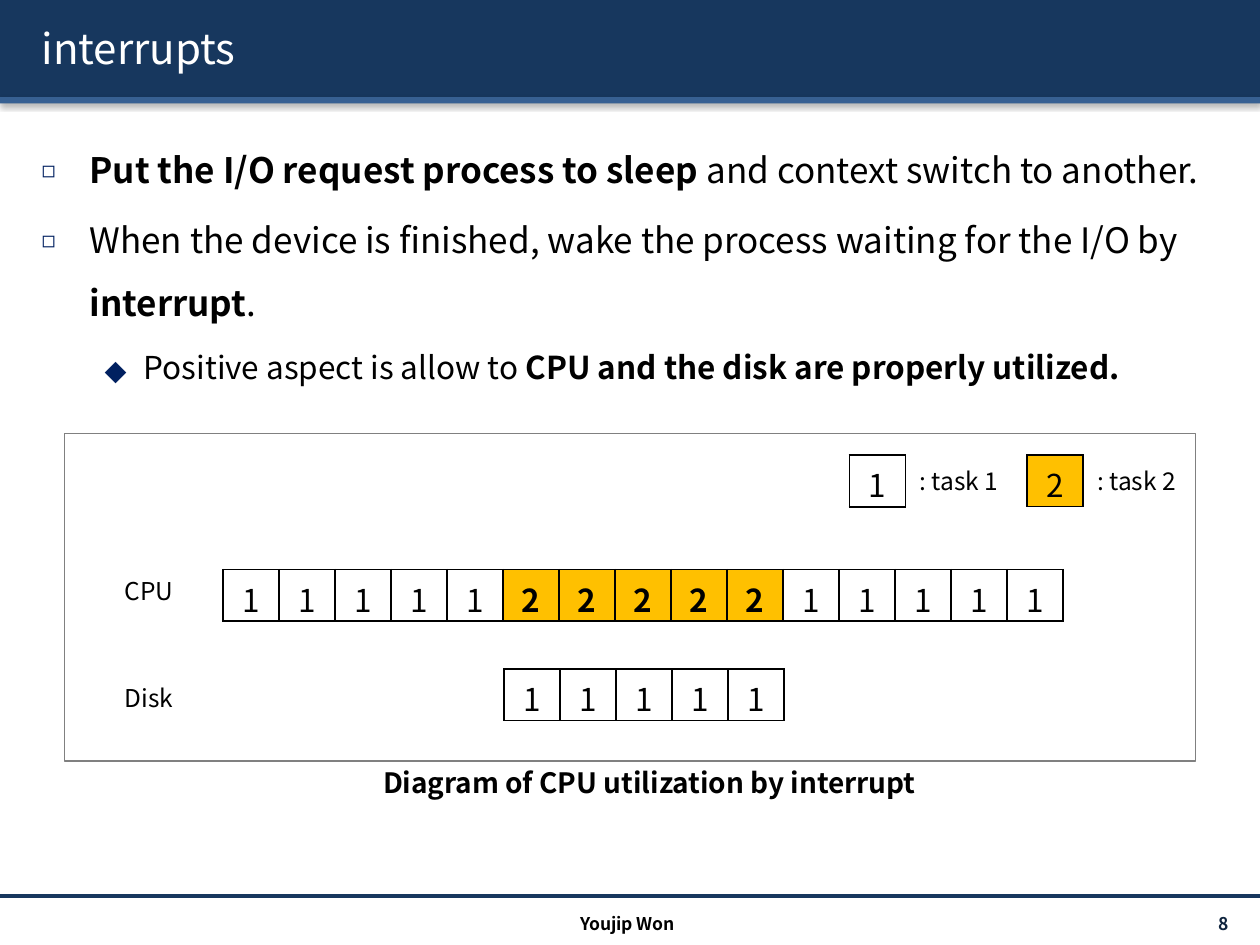
from lxml.etree import SubElement
from pptx import Presentation
from pptx.dml.color import RGBColor
from pptx.enum.shapes import MSO_CONNECTOR as Connector, MSO_SHAPE as Preset
from pptx.enum.text import MSO_ANCHOR as Anchor, PP_ALIGN as Align
from pptx.oxml.ns import qn
from pptx.util import Inches, Pt

FONT = "Noto Sans CJK KR"
NAVY = RGBColor(0x17, 0x37, 0x5E)
STEEL = RGBColor(0x37, 0x60, 0x92)
INK = RGBColor(0x0F, 0x24, 0x3E)
BULLET = RGBColor(0x00, 0x20, 0x60)
AMBER = RGBColor(0xFF, 0xC0, 0x00)
GRAY = RGBColor(0x80, 0x80, 0x80)
BLACK = RGBColor(0, 0, 0)
WHITE = RGBColor(255, 255, 255)
CELL_WIDTH = 0.4445


def style(font, size, color=BLACK, bold=False):
    """Apply the slide's typeface to a font."""
    font.name, font.size, font.bold = FONT, Pt(size), bold
    font.color.rgb = color


def add_shadow(effects, blur, distance, angle, opacity):
    """Add a black outer shadow to an effect list."""
    shadow = SubElement(effects, qn("a:outerShdw"), blurRad=str(Pt(blur)),
                        dist=str(Pt(distance)), dir=str(angle * 60000),
                        algn="t", rotWithShape="0")
    black = SubElement(shadow, qn("a:srgbClr"), val=str(BLACK))
    SubElement(black, qn("a:alpha"), val=str(opacity * 1000))


def place(part, box):
    """Move a part to a box given in inches."""
    part.left, part.top, part.width, part.height = map(Inches, box)


def add_label(slide, box, text, size, align=Align.LEFT, color=BLACK,
              bold=False, anchor=Anchor.TOP):
    """Add a one-line text box."""
    frame = slide.shapes.add_textbox(*map(Inches, box)).text_frame
    frame.word_wrap, frame.vertical_anchor = True, anchor
    line = frame.paragraphs[0]
    line.text, line.alignment = text, align
    style(line.font, size, color, bold)


def add_header(slide, box, text):
    """Draw the two shadowed bands and set the title over them."""
    left, top, width, height = box
    band_height = height - 0.05
    for offset, thickness, color in ((0, band_height, NAVY), (band_height, 0.05, STEEL)):
        band = slide.shapes.add_shape(
            Preset.RECTANGLE, *map(Inches, (left, top + offset, width, thickness)))
        band.fill.solid()
        band.fill.fore_color.rgb = color
        band.line.fill.background()
        band.shadow.inherit = False
        add_shadow(band.element.spPr.find(qn("a:effectLst")), 3.1, 1.6, 90, 38)
    title = slide.shapes.title
    place(title, (left + 0.23, top + 0.06, width - 0.39, 0.64))
    title.element.getparent().append(title.element)
    frame = title.text_frame
    frame.vertical_anchor = Anchor.MIDDLE
    heading = frame.paragraphs[0]
    heading.alignment = Align.LEFT
    run = heading.add_run()
    run.text = text
    style(run.font, 24, WHITE)
    properties = run.font.fill._xPr
    effects = SubElement(properties, qn("a:effectLst"))
    properties.find(qn("a:solidFill")).addnext(effects)
    add_shadow(effects, 1, 2, 45, 100)


def add_points(slide, box, points):
    """Fill the body placeholder with bulleted points of (level, runs)."""
    body = slide.placeholders[1]
    place(body, box)
    frame = body.text_frame
    for index, (level, pieces) in enumerate(points):
        point = frame.add_paragraph() if index else frame.paragraphs[0]
        size, indent, hanging, mark, scale = (
            (18, 0.81, 0.31, "⬥", 100) if level else (20, 0.38, 0.38, "◻", 65))
        point.level, point.line_spacing = level, 1.5
        point.space_before = Pt(size * 0.2 if index else 0)
        properties = point._p.get_or_add_pPr()
        properties.set("marL", str(Inches(indent)))
        properties.set("indent", str(-Inches(hanging)))
        SubElement(SubElement(properties, qn("a:buClr")), qn("a:srgbClr"), val=str(BULLET))
        SubElement(properties, qn("a:buSzPct"), val=str(scale * 1000))
        SubElement(properties, qn("a:buFont"), typeface=FONT)
        SubElement(properties, qn("a:buChar"), char=mark)
        style(point.font, size)
        for text, bold in pieces:
            run = point.add_run()
            run.text, run.font.bold = text, bold


def add_slots(slide, left, top, tasks, bold_second=False, bottom=0.0):
    """Add a one-row table of task numbers, with task 2 highlighted."""
    table = slide.shapes.add_table(
        1, len(tasks), *map(Inches, (left, top, CELL_WIDTH * len(tasks), 0.41))).table
    table.first_row = table.horz_banding = False
    for column, task in zip(table.columns, tasks):
        column.width = Inches(CELL_WIDTH)
    for cell, task in zip(table.rows[0].cells, tasks):
        second = task == "2"
        cell.margin_bottom = Inches(bottom)
        properties = cell._tc.get_or_add_tcPr()
        for side in ("lnL", "lnR", "lnT", "lnB"):
            border = SubElement(properties, qn(f"a:{side}"), w=str(Pt(1)))
            SubElement(SubElement(border, qn("a:solidFill")), qn("a:srgbClr"), val=str(BLACK))
        if second:
            cell.fill.solid()
            cell.fill.fore_color.rgb = AMBER
        else:
            cell.fill.background()
        number = cell.text_frame.paragraphs[0]
        number.text, number.alignment = task, Align.CENTER
        style(number.font, 18, bold=second and bold_second)


def add_diagram(slide, box):
    """Draw the framed CPU and disk timelines with legend and caption."""
    left, top, width, height = box
    frame = slide.shapes.add_shape(Preset.RECTANGLE, *map(Inches, box))
    frame.fill.background()
    frame.line.color.rgb, frame.line.width = GRAY, Pt(0.75)
    frame.shadow.inherit = False
    for task, offset in (("1", 6.23), ("2", 7.64)):
        add_slots(slide, left + offset, top + 0.17, task)
        add_label(slide, (left + offset + 0.46, top + 0.21, 0.9, 0.34), f": task {task}", 14)
    for name, offset in (("CPU", 1.08), ("Disk", 1.93)):
        add_label(slide, (left + 0.38, top + offset, 0.8, 0.34), name, 14)
    add_slots(slide, left + 1.26, top + 1.08, "1" * 5 + "2" * 5 + "1" * 5, True, 0.05)
    add_slots(slide, left + 3.49, top + 1.87, "1" * 5)
    add_label(slide, (left + 1.97, top + height - 0.01, 5.35, 0.37),
              "Diagram of CPU utilization by interrupt", 16, Align.CENTER, bold=True)


def add_footer(slide, box):
    """Draw the footer rule, the author and the page number."""
    left, top, width, height = box
    rule = slide.shapes.add_connector(
        Connector.STRAIGHT, *map(Inches, (left, top, left + width, top)))
    rule.line.color.rgb, rule.line.width = NAVY, Pt(2)
    SubElement(rule.element.spPr, qn("a:effectLst"))
    add_label(slide, (left + 3.32, top + 0.09, 3.32, 0.24), "Youjip Won", 10,
              Align.CENTER, bold=True)
    add_label(slide, (left + 8.68, top + 0.1, 1.17, 0.24), "8", 10,
              Align.RIGHT, INK, True, Anchor.MIDDLE)


def main():
    """Build the interrupts slide."""
    deck = Presentation()
    deck.slide_width, deck.slide_height = Inches(10), Inches(7.5)
    slide = deck.slides.add_slide(deck.slide_layouts[1])
    add_header(slide, (0, 0, 10, 0.82), "interrupts")
    add_points(slide, (0.23, 0.96, 9.61, 4.6), [
        (0, [("Put the I/O request process to sleep ", True),
             ("and context switch to another.", False)]),
        (0, [("When the device is finished, wake the process waiting for the I/O by ", False),
             ("interrupt", True), (".", False)]),
        (1, [("Positive aspect is allow to ", False),
             ("CPU and the disk are properly utilized.", True)]),
    ])
    add_diagram(slide, (0.51, 3.44, 8.98, 2.6))
    add_footer(slide, (0, 7.11, 10, 0.39))
    deck.save("out.pptx")


if __name__ == "__main__":
    main()
